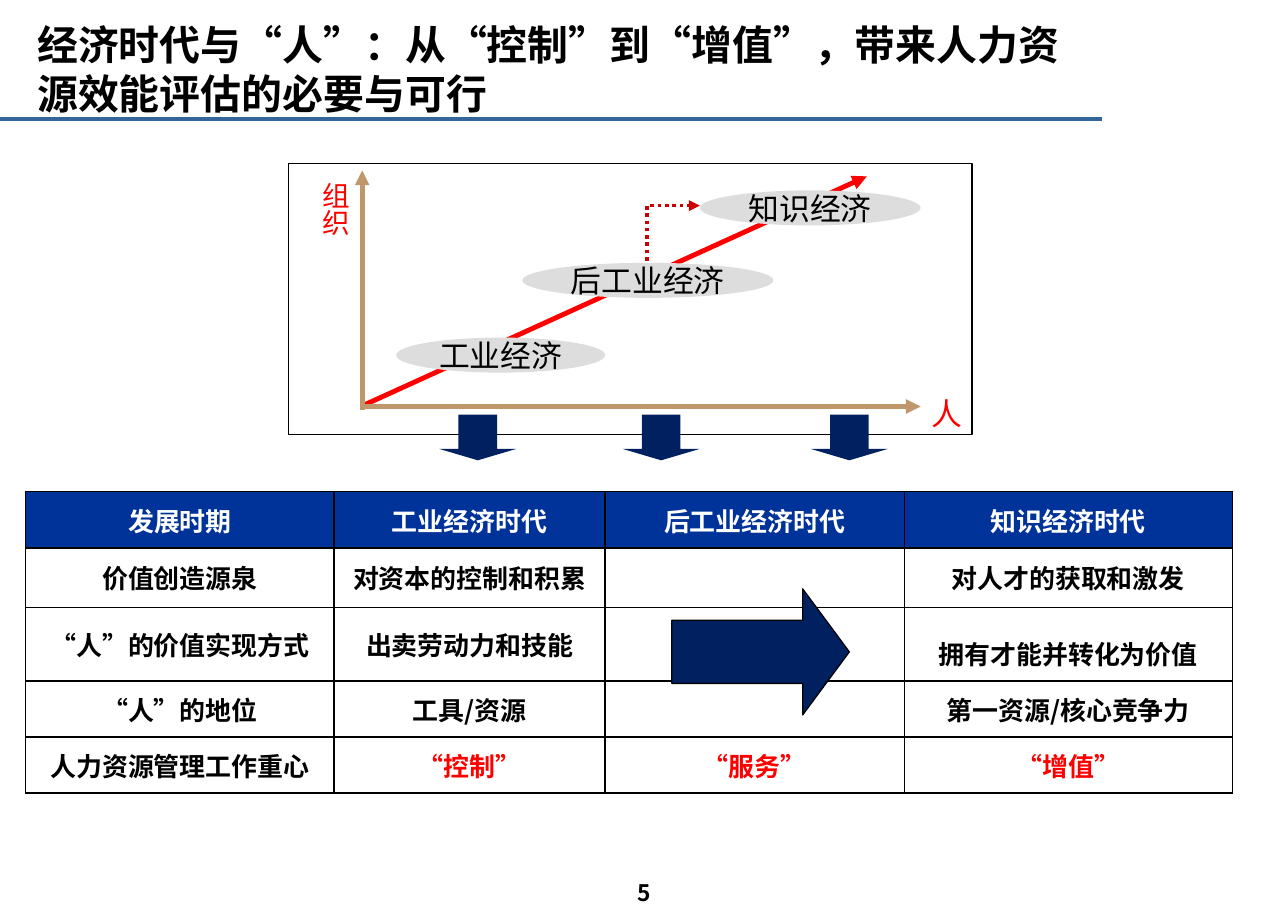
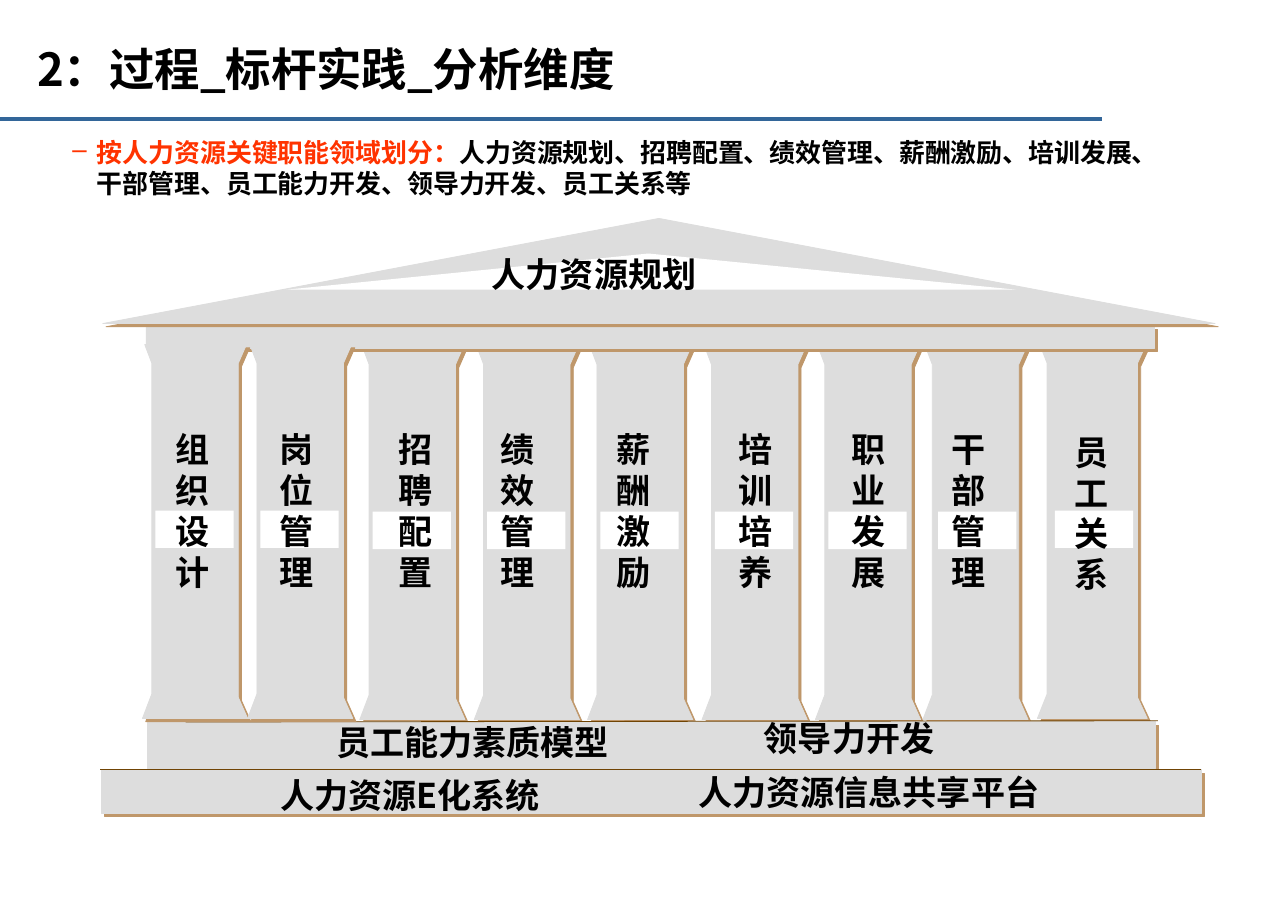
"""Build two slides on human resource effectiveness in the economic eras."""
from pptx import Presentation
from pptx.dml.color import RGBColor
from pptx.enum import dml, shapes, text
from pptx.oxml import ns, parse_xml
from pptx.util import Inches, Pt

FONT = "Noto Sans CJK SC"
BLACK = RGBColor(0x00, 0x00, 0x00)
WHITE = RGBColor(0xFF, 0xFF, 0xFF)
RED = RGBColor(0xFF, 0x00, 0x00)
DARK_RED = RGBColor(0xCC, 0x00, 0x00)
ORANGE = RGBColor(0xFF, 0x33, 0x00)
RULE_BLUE = RGBColor(0x33, 0x66, 0x99)
HEADER_BLUE = RGBColor(0x00, 0x33, 0x99)
NAVY = RGBColor(0x00, 0x20, 0x60)
STONE = RGBColor(0xDD, 0xDD, 0xDD)
TAN = RGBColor(0xBF, 0x97, 0x6A)
BROWN = RGBColor(0x70, 0x44, 0x04)

SLIDE_WIDTH, SLIDE_HEIGHT = Pt(793.75), Pt(567)
LEADING = 1.2
LEFT, CENTER = text.PP_ALIGN.LEFT, text.PP_ALIGN.CENTER
TOP, MIDDLE = text.MSO_ANCHOR.TOP, text.MSO_ANCHOR.MIDDLE
SHAPE = shapes.MSO_SHAPE

ERA_ROWS = [
    ["发展时期", "工业经济时代", "后工业经济时代", "知识经济时代"],
    ["价值创造源泉", "对资本的控制和积累", "", "对人才的获取和激发"],
    ["“人”的价值实现方式", "出卖劳动力和技能", "", "拥有才能并转化为价值"],
    ["“人”的地位", "工具/资源", "", "第一资源/核心竞争力"],
    ["人力资源管理工作重心", "“控制”", "“服务”", "“增值”"],
]
COLUMN_WIDTHS = [2.64, 2.32, 2.56, 2.81]
ROW_HEIGHTS = [0.48, 0.51, 0.63, 0.48, 0.48]

PILLARS = [
    (1.22, 2.95, 0.9, 0.11, 1.5, 3.67, "组织设计"),
    (2.12, 2.95, 0.9, 0.11, 2.39, 3.67, "岗位管理"),
    (3.08, 2.96, 0.9, 0.11, 3.41, 3.67, "招聘配置"),
    (4.06, 2.96, 0.9, 0.11, 4.28, 3.67, "绩效管理"),
    (5.03, 2.96, 0.9, 0.11, 5.28, 3.67, "薪酬激励"),
    (6.01, 2.96, 0.9, 0.11, 6.32, 3.67, "培训培养"),
    (6.98, 2.96, 0.9, 0.11, 7.29, 3.67, "职业发展"),
    (7.9, 2.96, 0.9, 0.13, 8.14, 3.67, "干部管理"),
    (8.88, 2.95, 0.94, 0.15, 9.2, 3.69, "员工关系"),
]
PILLAR_OUTLINE = [(0.02, 0), (0.89, 0), (0.82, 0.16), (0.82, 3.02),
                  (0.9, 3.2), (0, 3.2), (0.08, 2.99), (0.08, 0.16)]


def add_run(paragraph, words, size, color, bold=False):
    """Add one run with Latin and East Asian fonts set."""
    run = paragraph.add_run()
    run.text = words
    font = run.font
    font.size, font.bold, font.name = Pt(size), bold, FONT
    font.color.rgb = color
    east_asian = parse_xml(f'<a:ea {ns.nsdecls("a")} typeface="{FONT}"/>')
    run.font._element.find(ns.qn("a:latin")).addnext(east_asian)


def write(frame, words, size, color=BLACK, bold=False, align=LEFT, anchor=TOP, wrap=True):
    """Fill a text frame with one paragraph of one run."""
    frame.word_wrap, frame.vertical_anchor = wrap, anchor
    paragraph = frame.paragraphs[0]
    paragraph.alignment = align
    paragraph.line_spacing = Pt(size * LEADING)
    add_run(paragraph, words, size, color, bold)


def add_frame(slide, box, inset=True):
    """Add a text box and return its frame."""
    frame = slide.shapes.add_textbox(*map(Inches, box)).text_frame
    if not inset:
        frame.margin_left = frame.margin_right = frame.margin_top = frame.margin_bottom = 0
    return frame


def add_text(slide, box, words, size, inset=True, vertical=False, **style):
    """Add a text box with one run, vertical if asked."""
    frame = add_frame(slide, box, inset)
    write(frame, words, size, wrap=not vertical, **style)
    if vertical:
        frame._txBody.bodyPr.set("vert", "eaVert")


def paint(shape, fill, line=None, width=0.75, shadow=False):
    """Set the fill, outline and offset shadow of a shape."""
    shape.fill.solid()
    shape.fill.fore_color.rgb = fill
    if line is None:
        shape.line.fill.background()
    else:
        shape.line.color.rgb = line
        shape.line.width = Pt(width)
    shape.shadow.inherit = False
    if shadow:
        shape.element.spPr.find(ns.qn("a:effectLst")).append(parse_xml(
            f'<a:outerShdw {ns.nsdecls("a")} dist="{Pt(2.8)}" dir="2700000" algn="ctr" '
            f'rotWithShape="0"><a:srgbClr val="{TAN}"/></a:outerShdw>'))


def add_shape(slide, kind, box, fill, adjustments=(), **style):
    """Add a painted preset shape."""
    shape = slide.shapes.add_shape(kind, *map(Inches, box))
    for index, value in enumerate(adjustments):
        shape.adjustments[index] = value
    paint(shape, fill, **style)
    return shape


def add_stone(slide, kind, box):
    """Add a grey building block with a tan shadow."""
    add_shape(slide, kind, box, STONE, line=STONE, width=0.5, shadow=True)


def add_outline(slide, points, fill, **style):
    """Add a painted closed freeform."""
    corners = [(Inches(x), Inches(y)) for x, y in points]
    builder = slide.shapes.build_freeform(*corners[0])
    builder.add_line_segments(corners[1:], close=True)
    paint(builder.convert_to_shape(), fill, **style)


def add_line(slide, start, end, color, width, arrow=False, kind=shapes.MSO_CONNECTOR.STRAIGHT):
    """Add a connector, with an arrowhead at its end if asked."""
    connector = slide.shapes.add_connector(kind, *map(Inches, (*start, *end)))
    connector.line.color.rgb = color
    connector.line.width = Pt(width)
    properties = connector.element.spPr
    if arrow:
        properties.find(ns.qn("a:ln")).append(
            parse_xml(f'<a:tailEnd {ns.nsdecls("a")} type="triangle"/>'))
    properties.append(parse_xml(f'<a:effectLst {ns.nsdecls("a")}/>'))
    return connector


def add_corner_arrow(slide):
    """Add the dotted arrow that goes up and then right."""
    connector = add_line(slide, (5.53, 1.77), (6, 2.22), DARK_RED, 2.25, True,
                         shapes.MSO_CONNECTOR.ELBOW)
    connector.line.dash_style = dml.MSO_LINE.ROUND_DOT
    properties = connector.element.spPr
    properties.find(ns.qn("a:xfrm")).set("rot", "16200000")
    properties.find(ns.qn("a:prstGeom")).set("prst", "bentConnector2")


def add_titled_slide(presentation, title, size):
    """Add a blank slide with the shared rule and title."""
    slide = presentation.slides.add_slide(presentation.slide_layouts[6])
    add_line(slide, (0, 1.02), (9.43, 1.02), RULE_BLUE, 2.25)
    add_text(slide, (0.22, 0.22, 9, 0.73), title, size, bold=True, anchor=MIDDLE)
    return slide


def style_cell(cell, words, color, fill):
    """Write, fill and border one table cell."""
    cell.vertical_anchor = MIDDLE
    paragraph = cell.text_frame.paragraphs[0]
    paragraph.alignment = CENTER
    if words:
        add_run(paragraph, words, 16, color, True)
    if fill is None:
        cell.fill.background()
    else:
        cell.fill.solid()
        cell.fill.fore_color.rgb = fill
    properties = cell._tc.get_or_add_tcPr()
    for index, side in enumerate("LRTB"):
        properties.insert(index, parse_xml(
            f'<a:ln{side} {ns.nsdecls("a")} w="{Pt(1)}"><a:solidFill>'
            f'<a:srgbClr val="{BLACK}"/></a:solidFill></a:ln{side}>'))


def add_era_table(slide):
    """Add the table that compares the economic eras."""
    box = map(Inches, (0.22, 4.21, sum(COLUMN_WIDTHS), sum(ROW_HEIGHTS)))
    table = slide.shapes.add_table(len(ERA_ROWS), len(COLUMN_WIDTHS), *box).table
    table.first_row = table.horz_banding = False
    for column, width in zip(table.columns, COLUMN_WIDTHS):
        column.width = Inches(width)
    last = len(ERA_ROWS) - 1
    for i, (row, height) in enumerate(zip(ERA_ROWS, ROW_HEIGHTS)):
        table.rows[i].height = Inches(height)
        for j, words in enumerate(row):
            color = WHITE if i == 0 else RED if i == last and j else BLACK
            style_cell(table.cell(i, j), words, color, HEADER_BLUE if i == 0 else None)
    table.cell(2, 3).text_frame.paragraphs[0].line_spacing = 1.5


def add_era_chart(slide):
    """Add the diagram of eras between people and organisation."""
    add_shape(slide, SHAPE.RECTANGLE, (2.47, 1.4, 5.85, 2.32), WHITE, line=BLACK)
    add_text(slide, (7.78, 3.31, 0.52, 0.37), "人", 19, vertical=True, color=RED)
    add_line(slide, (3.11, 3.47), (7.42, 1.51), RED, 3, True)
    for left, top, width, era in [(3.39, 2.89, 1.79, "工业经济"),
                                  (4.47, 2.25, 2.15, "后工业经济"),
                                  (5.99, 1.63, 1.89, "知识经济")]:
        ellipse = add_shape(slide, SHAPE.OVAL, (left, top, width, 0.3), STONE)
        write(ellipse.text_frame, era, 19, align=CENTER, anchor=MIDDLE, wrap=False)
    add_corner_arrow(slide)
    add_line(slide, (3.1, 3.51), (3.1, 1.46), TAN, 3, True)
    add_line(slide, (3.12, 3.48), (7.88, 3.48), TAN, 3, True)
    add_text(slide, (2.57, 1.46, 0.49, 0.58), "组织", 17, vertical=True, color=RED)


def build_era_slide(presentation):
    """Build the slide on eras and people."""
    slide = add_titled_slide(
        presentation, "经济时代与“人”：从“控制”到“增值”，带来人力资源效能评估的必要与可行", 25.2)
    add_era_table(slide)
    add_era_chart(slide)
    for left in (3.76, 5.33, 6.94):
        add_shape(slide, SHAPE.DOWN_ARROW, (left, 3.55, 0.66, 0.39), NAVY, (0.5, 0.25))
    add_shape(slide, SHAPE.RIGHT_ARROW, (5.75, 5.04, 1.52, 1.08), NAVY, (0.5, 0.37), line=BLACK)
    add_text(slide, (5.19, 7.47, 0.65, 0.33), "5", 14, bold=True, align=CENTER, anchor=MIDDLE)


def add_summary(slide):
    """Add the bulleted line under the title."""
    frame = add_frame(slide, (0.62, 1.17, 9.46, 0.6), inset=False)
    frame.word_wrap = True
    paragraph = frame.paragraphs[0]
    properties = paragraph._p.get_or_add_pPr()
    properties.set("marL", str(Inches(0.21)))
    properties.set("indent", str(Inches(-0.21)))
    properties.append(parse_xml(
        f'<a:buClr {ns.nsdecls("a")}><a:srgbClr val="{ORANGE}"/></a:buClr>'))
    properties.append(parse_xml(f'<a:buChar {ns.nsdecls("a")} char="–"/>'))
    paragraph.line_spacing = Pt(16 * LEADING)
    add_run(paragraph, "按人力资源关键职能领域划分：", 16, ORANGE, True)
    add_run(paragraph, "人力资源规划、招聘配置、绩效管理、薪酬激励、培训发展、"
            "干部管理、员工能力开发、领导力开发、员工关系等", 16, BLACK, True)


def add_pillar(slide, left, top, width, panel_offset, label_left, label_top, label):
    """Add a pillar with its white panel and stacked label."""
    points = [(left + x * width / 0.9, top + y) for x, y in PILLAR_OUTLINE]
    add_outline(slide, points, STONE, line=STONE, width=0.5, shadow=True)
    add_shape(slide, SHAPE.RECTANGLE, (left + panel_offset, top + 1.42, 0.67, 0.32), WHITE)
    add_text(slide, (label_left, label_top, 0.42, 1.4), label, 21, inset=False, bold=True)


def build_temple_slide(presentation):
    """Build the slide with the temple of functions."""
    slide = add_titled_slide(presentation, "2：过程_标杆实践_分析维度", 28)
    add_summary(slide)
    for pillar in PILLARS[2:]:
        add_pillar(slide, *pillar)
    add_stone(slide, SHAPE.RECTANGLE, (1.25, 2.79, 8.63, 0.19))
    add_stone(slide, SHAPE.ISOSCELES_TRIANGLE, (0.88, 1.87, 9.52, 0.9))
    add_outline(slide, [(2.45, 2.48), (8.7, 2.48), (5.55, 2.17)], WHITE)
    add_text(slide, (4.21, 2.17, 2.72, 0.35), "人力资源规划", 21, inset=False,
             bold=True, anchor=MIDDLE)
    add_stone(slide, SHAPE.RECTANGLE, (1.26, 6.18, 8.63, 0.4))
    add_stone(slide, SHAPE.RECTANGLE, (0.87, 6.59, 9.41, 0.37))
    add_line(slide, (0.86, 6.59), (10.28, 6.59), BROWN, 0.5)
    add_line(slide, (1.59, 6.18), (9.91, 6.17), BROWN, 0.5)
    for pillar in PILLARS[:2]:
        add_pillar(slide, *pillar)
    for left, top, width, label in [(2.78, 6.13, 2.56, "员工能力素质模型"),
                                    (6.44, 6.09, 1.8, "领导力开发"),
                                    (2.3, 6.58, 3.36, "人力资源E化系统"),
                                    (5.88, 6.55, 3.85, "人力资源信息共享平台")]:
        add_text(slide, (left, top, width, 0.45), label, 21, bold=True)


def main():
    """Build and save the presentation."""
    presentation = Presentation()
    presentation.slide_width, presentation.slide_height = SLIDE_WIDTH, SLIDE_HEIGHT
    presentation.element.sldSz.attrib.pop("type", None)
    build_era_slide(presentation)
    build_temple_slide(presentation)
    presentation.save("out.pptx")


if __name__ == "__main__":
    main()
